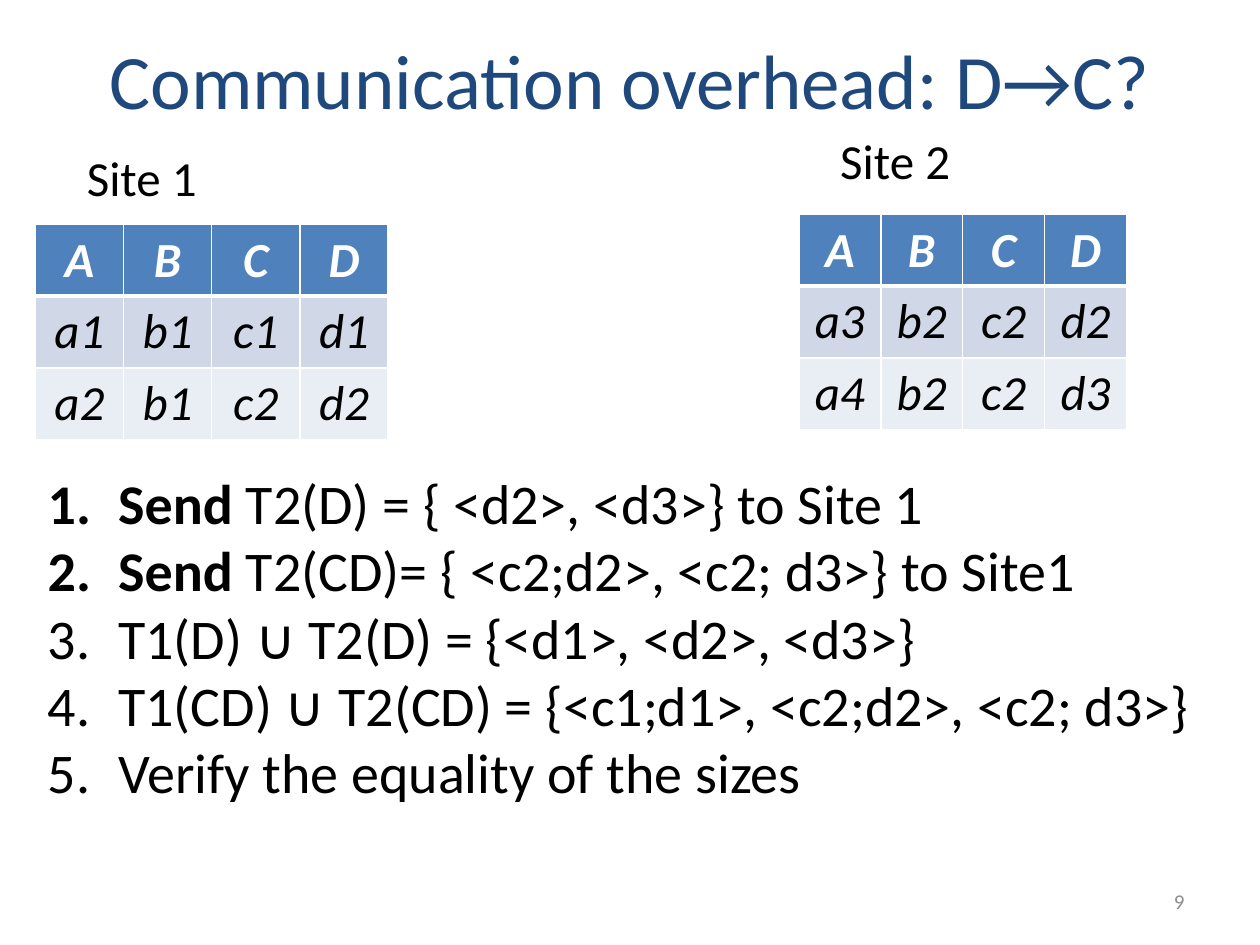
from lxml import etree
from pptx import Presentation
from pptx.dml.color import RGBColor
from pptx.enum.text import MSO_ANCHOR, PP_ALIGN
from pptx.oxml.ns import qn
from pptx.util import Inches, Pt

LEFT, CENTER, RIGHT = PP_ALIGN.LEFT, PP_ALIGN.CENTER, PP_ALIGN.RIGHT
TOP, MIDDLE = MSO_ANCHOR.TOP, MSO_ANCHOR.MIDDLE

FONT = "Calibri"
NAVY = RGBColor(0x1F, 0x49, 0x7D)
BLACK = RGBColor(0, 0, 0)
WHITE = RGBColor(0xFF, 0xFF, 0xFF)
GRAY = RGBColor(0x8C, 0x8C, 0x8C)
HEADER_BLUE = RGBColor(0x4F, 0x81, 0xBD)
ROW_FILLS = [HEADER_BLUE, RGBColor(0xD0, 0xD8, 0xE8), RGBColor(0xE9, 0xED, 0xF4)]

ROW_HEIGHT = 0.57
STEP_INDENT = Inches(0.56)

SITE_1 = [["A", "B", "C", "D"], ["a1", "b1", "c1", "d1"], ["a2", "b1", "c2", "d2"]]
SITE_2 = [["A", "B", "C", "D"], ["a3", "b2", "c2", "d2"], ["a4", "b2", "c2", "d3"]]
STEPS = [
    ("Send ", "T2(D) = { <d2>, <d3>} to Site 1"),
    ("Send ", "T2(CD)= { <c2;d2>, <c2; d3>} to Site1"),
    ("", "T1(D) ∪ T2(D) = {<d1>, <d2>, <d3>}"),
    ("", "T1(CD) ∪ T2(CD) = {<c1;d1>, <c2;d2>, <c2; d3>}"),
    ("", "Verify the equality of the sizes"),
]


def style_font(font, size, color, bold=False, italic=False):
    font.name = FONT
    font.size = Pt(size)
    font.color.rgb = color
    font.bold = bold
    font.italic = italic


def add_frame(slide, left, top, width, height, anchor=TOP):
    box = slide.shapes.add_textbox(Inches(left), Inches(top), Inches(width), Inches(height))
    frame = box.text_frame
    frame.word_wrap = True
    frame.vertical_anchor = anchor
    return frame


def add_label(slide, text, bounds, size, color, align=LEFT, anchor=TOP):
    frame = add_frame(slide, *bounds, anchor)
    frame.text = text
    paragraph = frame.paragraphs[0]
    paragraph.alignment = align
    style_font(paragraph.runs[0].font, size, color)


def set_borders(cell, bottom_width):
    properties = cell._tc.get_or_add_tcPr()
    for side, width in (("L", 1), ("R", 1), ("T", 1), ("B", bottom_width)):
        line = etree.SubElement(properties, qn(f"a:ln{side}"), w=str(Pt(width)))
        fill = etree.SubElement(line, qn("a:solidFill"))
        etree.SubElement(fill, qn("a:srgbClr"), val=str(WHITE))


def add_relation(slide, rows, left, top, column_width):
    columns = len(rows[0])
    table = slide.shapes.add_table(
        len(rows), columns, Inches(left), Inches(top),
        Inches(column_width * columns), Inches(ROW_HEIGHT * len(rows)),
    ).table
    for column in table.columns:
        column.width = Inches(column_width)
    for row_index, values in enumerate(rows):
        is_header = row_index == 0
        for column_index, value in enumerate(values):
            cell = table.cell(row_index, column_index)
            set_borders(cell, 3 if is_header else 1)
            cell.fill.solid()
            cell.fill.fore_color.rgb = ROW_FILLS[row_index]
            cell.text = value
            paragraph = cell.text_frame.paragraphs[0]
            paragraph.alignment = CENTER
            color = WHITE if is_header else BLACK
            style_font(paragraph.runs[0].font, 28, color, is_header, True)


def add_steps(slide):
    frame = add_frame(slide, 0.28, 3.67, 9.72, 2.79)
    for index, (action, detail) in enumerate(STEPS):
        paragraph = frame.add_paragraph() if index else frame.paragraphs[0]
        properties = paragraph._p.get_or_add_pPr()
        properties.set("marL", str(STEP_INDENT))
        properties.set("indent", str(-STEP_INDENT))
        etree.SubElement(properties, qn("a:buFont"), typeface="+mj-lt")
        etree.SubElement(properties, qn("a:buAutoNum"), type="arabicPeriod")
        for text, bold in ((action, True), (detail, False)):
            if text:
                run = paragraph.add_run()
                run.text = text
                style_font(run.font, 32, BLACK, bold)


def main():
    presentation = Presentation()
    presentation.slide_width = Inches(10)
    presentation.slide_height = Inches(7.5)
    slide = presentation.slides.add_slide(presentation.slide_layouts[6])

    add_label(slide, "Communication overhead: D→C?", (0, 0, 10, 1.25), 44, NAVY, CENTER, MIDDLE)
    add_relation(slide, SITE_1, 0.28, 1.78, 0.7)
    add_relation(slide, SITE_2, 6.34, 1.7, 0.65)
    add_steps(slide)
    add_label(slide, "Site 1", (0.59, 1.12, 1.89, 0.57), 28, BLACK)
    add_label(slide, "Site 2", (6.57, 0.99, 1.89, 0.57), 28, BLACK)
    add_label(slide, "9", (7.17, 6.95, 2.33, 0.4), 12, GRAY, RIGHT, MIDDLE)

    presentation.save("out.pptx")


if __name__ == "__main__":
    main()
